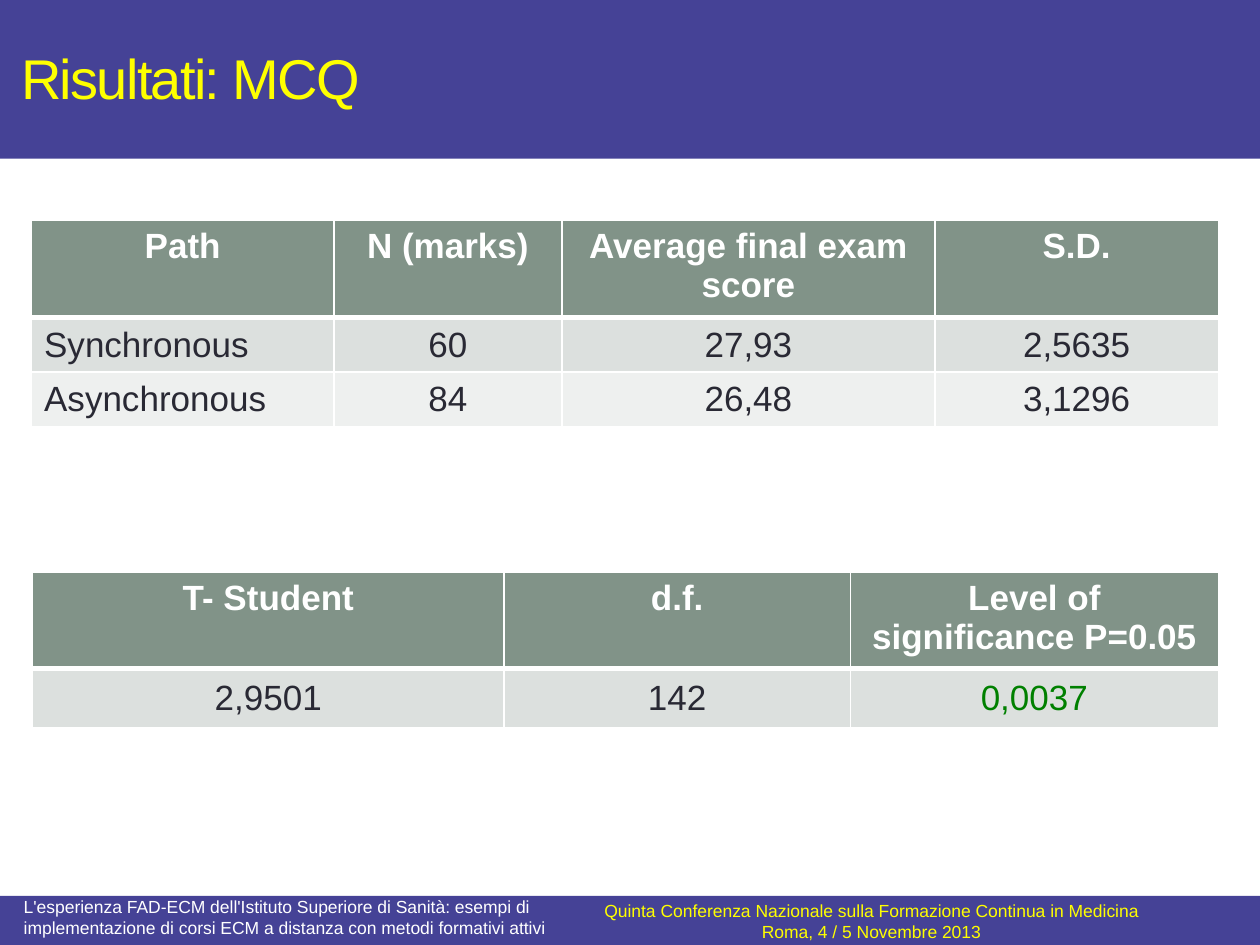
from lxml import etree
from pptx import Presentation, util as u
from pptx.dml.color import RGBColor
from pptx.enum import shapes, text
from pptx.oxml.ns import qn

COLORS = {
    "band": "454296", "accent": "FFFF00", "white": "FFFFFF", "ink": "292934",
    "header": "819388", "odd": "DCE0DE", "even": "EEF0EF", "result": "008000",
}
LEFT, CENTER = text.PP_ALIGN.LEFT, text.PP_ALIGN.CENTER
TOP, MIDDLE = text.MSO_ANCHOR.TOP, text.MSO_ANCHOR.MIDDLE
MARGINS = (0.1, 0.05, 0.1, 0.05)


def rgb(name):
    return RGBColor.from_string(COLORS[name])


def write(frame, content, size=20, color="ink", bold=False, align=LEFT, spacing=None):
    for index, line in enumerate(content.split("\n")):
        paragraph = frame.add_paragraph() if index else frame.paragraphs[0]
        paragraph.alignment = align
        run = paragraph.add_run()
        run.text = line
        run.font.name = "Arial"
        run.font.size = u.Pt(size)
        run.font.bold = bold
        run.font.color.rgb = rgb(color)
        if spacing is not None:
            run.font._element.set("spc", str(int(spacing * 100)))


class Deck:
    COLUMNS, ROWS = 100, 75

    def __init__(self, width=10, height=7.5):
        self.file = Presentation()
        self.file.slide_width = u.Inches(width)
        self.file.slide_height = u.Inches(height)
        self.slide = self.file.slides.add_slide(self.file.slide_layouts[6])

    def x(self, columns):
        return round(self.file.slide_width * columns / self.COLUMNS)

    def y(self, rows):
        return round(self.file.slide_height * rows / self.ROWS)

    def box(self, left, top, width, height):
        return self.x(left), self.y(top), self.x(width), self.y(height)

    def band(self, *place):
        band = self.slide.shapes.add_shape(shapes.MSO_SHAPE.RECTANGLE, *self.box(*place))
        band.shadow.inherit = False
        band.fill.solid()
        band.fill.fore_color.rgb = rgb("band")
        band.line.fill.background()

    def label(self, place, content, anchor=MIDDLE, margin_top=0.05, **style):
        frame = self.slide.shapes.add_textbox(*self.box(*place)).text_frame
        frame.word_wrap = True
        frame.vertical_anchor = anchor
        frame.margin_top = u.Inches(margin_top)
        write(frame, content, **style)

    def border(self, cell, **weights):
        properties = cell._tc.get_or_add_tcPr()
        for side, weight in weights.items():
            line = etree.SubElement(properties, qn(f"a:ln{side}"), w=str(u.Pt(weight)))
            fill = etree.SubElement(line, qn("a:solidFill"))
            etree.SubElement(fill, qn("a:srgbClr"), val=COLORS["white"])

    def table(self, left, top, widths, heights, rows, first_align=CENTER, highlights=()):
        place = self.box(left, top, sum(widths), sum(heights))
        grid = self.slide.shapes.add_table(len(rows), len(widths), *place).table
        grid.horz_banding = False
        for column, width in zip(grid.columns, widths):
            column.width = self.x(width)
        for row, height in zip(grid.rows, heights):
            row.height = self.y(height)
        for r, values in enumerate(rows):
            header = r == 0
            for c, value in enumerate(values):
                cell = grid.cell(r, c)
                self.border(cell, L=1, R=1, T=3 if r == 1 else 1, B=3 if header else 1)
                cell.fill.solid()
                cell.fill.fore_color.rgb = rgb("header" if header else "odd" if r % 2 else "even")
                cell.vertical_anchor = TOP if header else MIDDLE
                cell.margin_left, cell.margin_top, cell.margin_right, cell.margin_bottom = map(
                    u.Inches, MARGINS)
                color = "white" if header else "result" if value in highlights else "ink"
                align = CENTER if header or c else first_align
                write(cell.text_frame, value, color=color, bold=header, align=align)


def main():
    deck = Deck()
    deck.band(0, 71.1, 100, 3.9)
    deck.band(0, 0, 100, 12.6)
    deck.label((0.7, 0.7, 75, 10.8), "Risultati: MCQ", size=32, color="accent", spacing=-1)

    deck.table(2.5, 17.5, (24, 18.1, 29.6, 22.5), (7.7, 4.3, 4.3), [
        ("Path", "N (marks)", "Average final exam score", "S.D."),
        ("Synchronous", "60", "27,93", "2,5635"),
        ("Asynchronous", "84", "26,48", "3,1296"),
    ], first_align=LEFT)
    deck.table(2.6, 45.4, (37.4, 27.5, 29.2), (7.6, 4.7), [
        ("T- Student", "d.f.", "Level of significance P=0.05"),
        ("2,9501", "142", "0,0037"),
    ], highlights=("0,0037",))

    deck.label(
        (46.5, 71.3, 45.3, 3.6),
        "Quinta Conferenza Nazionale sulla Formazione Continua in Medicina\n"
        "Roma, 4 / 5 Novembre 2013",
        size=10, color="accent", align=CENTER)
    deck.label(
        (0.9, 71.1, 44.6, 3.9),
        "L'esperienza FAD-ECM dell'Istituto Superiore di Sanità: esempi di "
        "implementazione di corsi ECM a distanza con metodi formativi attivi",
        anchor=TOP, margin_top=0, size=10, color="white")
    deck.file.save("out.pptx")


if __name__ == "__main__":
    main()
